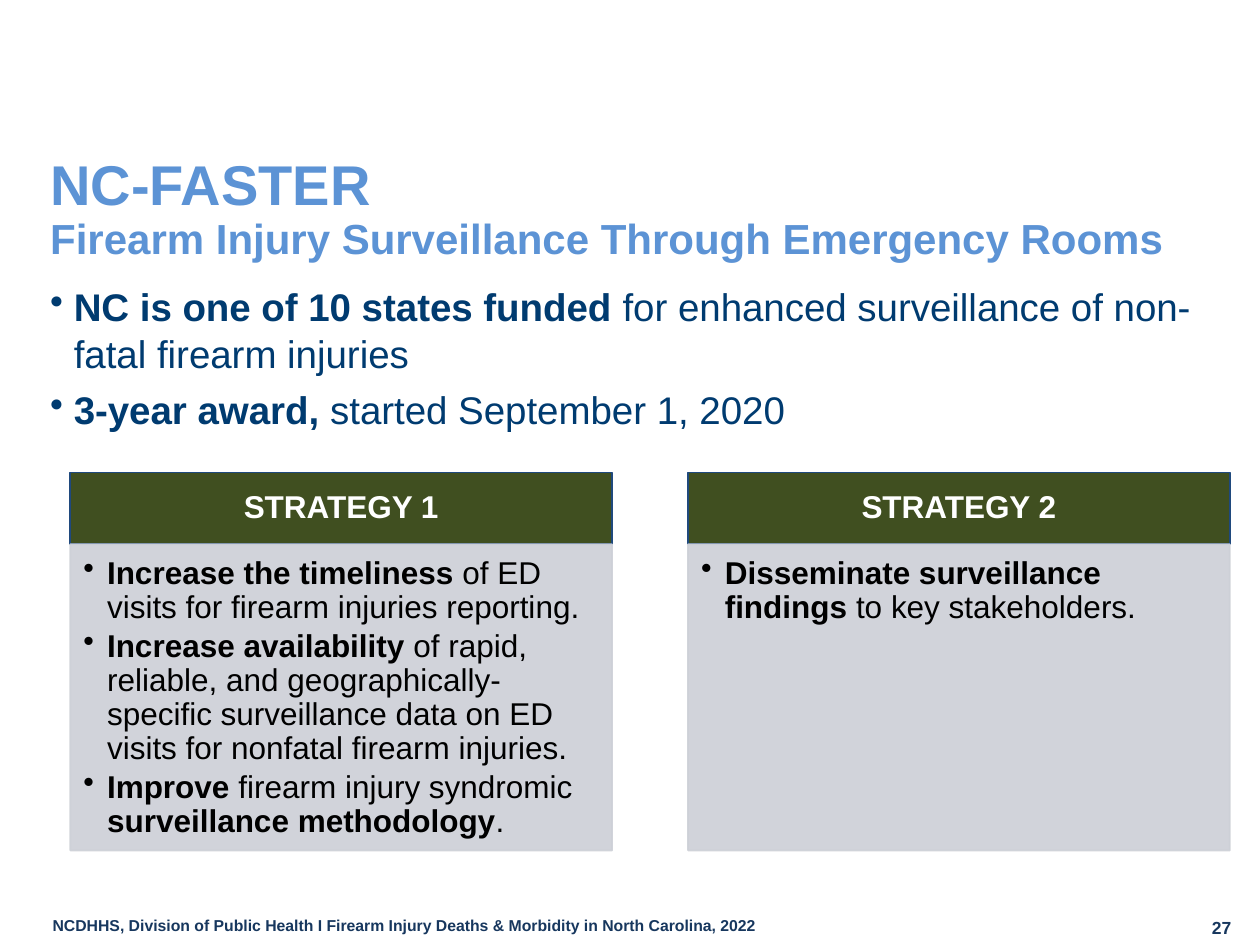
from lxml import etree
from pptx import Presentation
from pptx.dml.color import RGBColor
from pptx.enum.shapes import MSO_SHAPE
from pptx.enum.text import MSO_ANCHOR, PP_ALIGN
from pptx.oxml.ns import qn
from pptx.util import Pt

RECTANGLE = MSO_SHAPE.RECTANGLE
TOP, MIDDLE = MSO_ANCHOR.TOP, MSO_ANCHOR.MIDDLE
LEFT, CENTER = PP_ALIGN.LEFT, PP_ALIGN.CENTER
BLANK_LAYOUT = 6

TITLE_BLUE, BODY_BLUE, FOOTER_BLUE = "5C93D5", "003B70", "17375E"
HEADER_GREEN, HEADER_EDGE = "404F20", "1F497D"
PANEL_GRAY, PANEL_EDGE = "CCCFD7", "CDD0D7"
BLACK, WHITE = "000000", "FFFFFF"

CARD_LEFT, CARD_TOP, CARD_STEP, CARD_WIDTH = 40.2, 270, 353, 309.6
HEADER_HEIGHT, PANEL_HEIGHT = 41, 175

FACTS = [
    [("NC is one of 10 states funded ", True),
     ("for enhanced surveillance of non-fatal firearm injuries", False)],
    [("3-year award, ", True), ("started September 1, 2020", False)],
]
STRATEGIES = [
    ("STRATEGY 1", [
        [("Increase the timeliness ", True),
         ("of ED visits for firearm injuries reporting.", False)],
        [("Increase availability ", True),
         ("of rapid, reliable, and geographically-specific surveillance data "
          "on ED visits for nonfatal firearm injuries.", False)],
        [("Improve ", True), ("firearm injury syndromic ", False),
         ("surveillance methodology", True), (".", False)],
    ]),
    ("STRATEGY 2", [
        [("Disseminate surveillance findings ", True),
         ("to key stakeholders.", False)],
    ]),
]


def rgb(color):
    """Turn a hex string into a colour."""
    return RGBColor.from_string(color)


def add_text_box(page, left, top, width, height):
    """Add a wrapping text box and return its text frame."""
    box = page.shapes.add_textbox(Pt(left), Pt(top), Pt(width), Pt(height))
    box.text_frame.word_wrap = True
    return box.text_frame


def add_block(page, left, top, width, height, fill, edge, opacity=100):
    """Add a rectangle and return its text frame."""
    block = page.shapes.add_shape(RECTANGLE, Pt(left), Pt(top), Pt(width), Pt(height))
    block.shadow.inherit = False
    block.fill.solid()
    block.fill.fore_color.rgb = rgb(fill)
    block.line.color.rgb = rgb(edge)
    block.line.width = Pt(1)
    if opacity < 100:
        for color in block._element.spPr.iter(qn("a:srgbClr")):
            etree.SubElement(color, qn("a:alpha")).set("val", str(opacity * 1000))
    block.text_frame.word_wrap = True
    return block.text_frame


def set_margins(frame, left, top, right, bottom):
    """Set the insets of a text frame."""
    frame.margin_left, frame.margin_top = Pt(left), Pt(top)
    frame.margin_right, frame.margin_bottom = Pt(right), Pt(bottom)


def next_paragraph(frame):
    """Return the first paragraph while it is empty, else a new one."""
    first = frame.paragraphs[0]
    return frame.add_paragraph() if first.runs else first


def style(para, size, color, align=LEFT):
    """Set the font and alignment of a paragraph."""
    para.alignment = align
    para.font.name = "Arial"
    para.font.size = Pt(size)
    para.font.color.rgb = rgb(color)


def add_heading(frame, text, size, color, align=LEFT, spacing=None):
    """Add a bold paragraph."""
    para = next_paragraph(frame)
    para.add_run().text = text
    style(para, size, color, align)
    para.font.bold = True
    para.line_spacing = spacing


def add_bullets(frame, items, size, color, before=0, after=0, spacing=None):
    """Add bulleted paragraphs of bold and plain spans."""
    for item in items:
        para = next_paragraph(frame)
        for text, bold in item:
            span = para.add_run()
            span.text = text
            span.font.bold = bold
        style(para, size, color)
        para.space_before, para.space_after = Pt(before), Pt(after)
        para.line_spacing = spacing
        properties = para._p.get_or_add_pPr()
        properties.set("marL", str(Pt(13.5)))
        properties.set("indent", str(-Pt(13.5)))
        bullet = etree.Element(qn("a:buChar"), char="•")
        properties.find(qn("a:defRPr")).addprevious(bullet)


def add_strategy(page, left, name, items):
    """Add a header block above a panel of bullets."""
    header = add_block(page, left, CARD_TOP, CARD_WIDTH, HEADER_HEIGHT,
                       HEADER_GREEN, HEADER_EDGE)
    header.vertical_anchor = MIDDLE
    set_margins(header, 10, 6, 10, 6)
    add_heading(header, name, 18, WHITE, CENTER, 0.9)
    panel = add_block(page, left, CARD_TOP + HEADER_HEIGHT, CARD_WIDTH, PANEL_HEIGHT,
                      PANEL_GRAY, PANEL_EDGE, 90)
    panel.vertical_anchor = TOP
    set_margins(panel, 7.5, 7.5, 10, 11.5)
    add_bullets(panel, items, 18, BLACK, after=2.7, spacing=0.9)


def main():
    """Build the slide and save the deck."""
    deck = Presentation()
    deck.slide_width, deck.slide_height = Pt(720), Pt(540)
    page = deck.slides.add_slide(deck.slide_layouts[BLANK_LAYOUT])

    title = add_text_box(page, 21.6, 86.4, 651.6, 77)
    add_heading(title, "NC-FASTER", 32, TITLE_BLUE, spacing=0.9)
    add_heading(title, "Firearm Injury Surveillance Through Emergency Rooms", 24,
                TITLE_BLUE, spacing=0.9)

    body = add_text_box(page, 21.6, 158.4, 674.6, 100)
    add_bullets(body, FACTS, 22, BODY_BLUE, before=6)

    for index, (name, items) in enumerate(STRATEGIES):
        add_strategy(page, CARD_LEFT + index * CARD_STEP, name, items)

    footer = add_text_box(page, 23, 519.8, 629.3, 20)
    add_heading(footer, "NCDHHS, Division of Public Health Ι Firearm Injury Deaths "
                "& Morbidity in North Carolina, 2022", 9, FOOTER_BLUE)
    number = add_text_box(page, 685.4, 520.6, 30.2, 19.4)
    add_heading(number, "27", 10, FOOTER_BLUE)

    deck.save("out.pptx")


if __name__ == "__main__":
    main()
